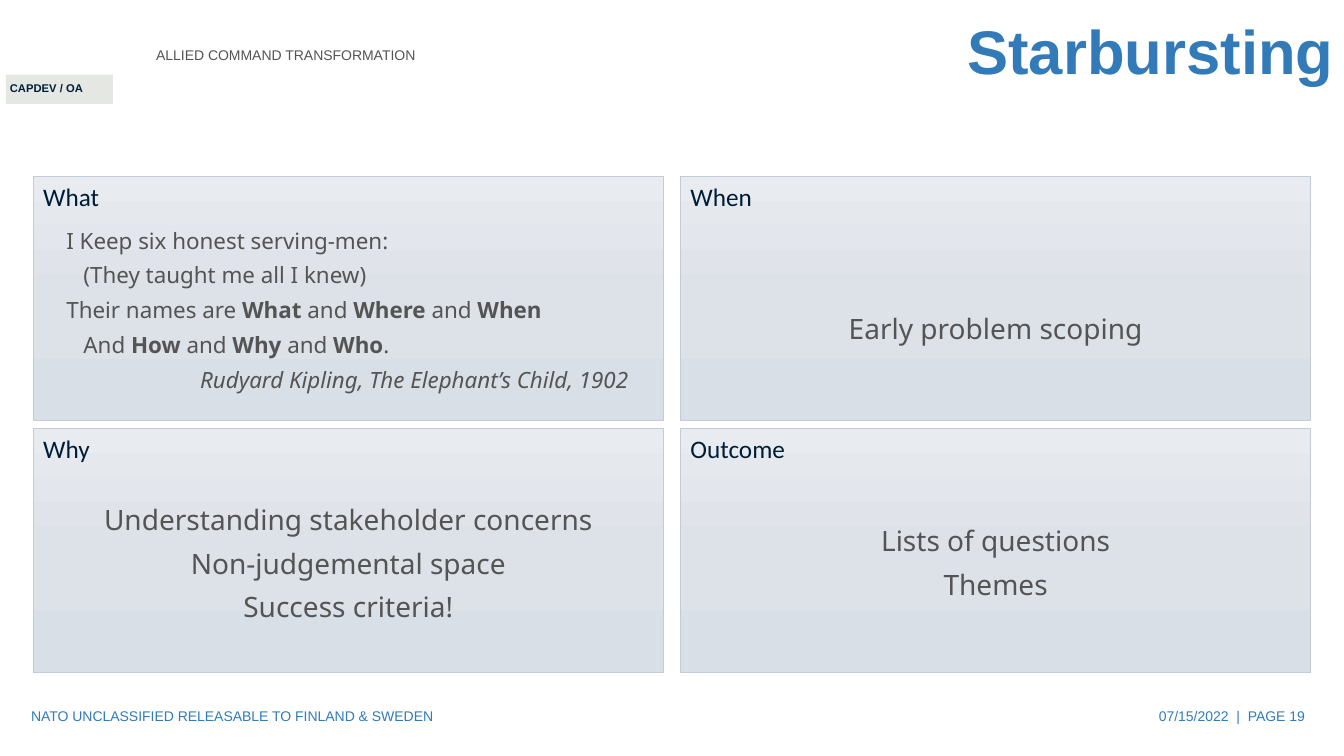
from dataclasses import dataclass

from pptx import Presentation
from pptx.dml.color import RGBColor
from pptx.enum.shapes import MSO_SHAPE
from pptx.enum.text import MSO_ANCHOR, PP_ALIGN
from pptx.oxml import parse_xml
from pptx.oxml.ns import nsdecls
from pptx.util import Inches, Pt

RECT = MSO_SHAPE.RECTANGLE
TOP, MID = MSO_ANCHOR.TOP, MSO_ANCHOR.MIDDLE
LEFT, MIDST, RIGHT = PP_ALIGN.LEFT, PP_ALIGN.CENTER, PP_ALIGN.RIGHT

NAVY, BLUE, GREY = "001D38", "327BB8", "545454"
STOPS = ((0, "E8EBEF"), (50, "DDE2E8"), (100, "D9DFE6"))
WIDE, HIGH = 6.25, 2.42
COLS, ROWS = (0.33, 6.75), (1.75, 4.25)


@dataclass
class Line:
    text: str  # parts between ** marks are bold
    align: PP_ALIGN = MIDST
    indent: float = 0
    italic: bool = False


@dataclass
class Label:
    text: str
    box: tuple[float, float, float, float]
    size: float
    color: str
    align: PP_ALIGN = LEFT
    bold: bool = False
    anchor: MSO_ANCHOR = MID
    wrap: bool = True


@dataclass
class Panel:
    head: str
    col: int
    row: int
    box: tuple[float, float, float, float]
    size: float
    lines: list[Line]


LABELS = [
    Label("ALLIED COMMAND TRANSFORMATION", (1.45, 0.25, 5.91, 0.59), 10, GREY),
    Label("CAPDEV / OA", (0, 0.76, 0.93, 0.24), 8, NAVY, bold=True, anchor=TOP, wrap=False),
    Label("Starbursting", (1.83, 0, 11.5, 1.08), 44, BLUE, RIGHT, True),
    Label("NATO UNCLASSIFIED RELEASABLE TO FINLAND & SWEDEN", (0.21, 6.9, 4.5, 0.4), 10, BLUE),
    Label("07/15/2022  |  PAGE 19", (10.04, 6.9, 3, 0.4), 10, BLUE, RIGHT),
]

PANELS = [
    Panel("What", 0, 0, (0.56, 2.11, 5.77, 1.85), 16, [
        Line("I Keep six honest serving-men:", LEFT),
        Line("(They taught me all I knew)", LEFT, 0.17),
        Line("Their names are **What** and **Where** and **When**", LEFT),
        Line("And **How** and **Why** and **Who**.", LEFT, 0.17),
        Line("Rudyard Kipling, The Elephant’s Child, 1902", RIGHT, italic=True),
    ]),
    Panel("When", 1, 0, (7, 2.96, 5.75, 0.5), 20, [Line("Early problem scoping")]),
    Panel("Why", 0, 1, (0.58, 4.83, 5.75, 1.41), 20, [
        Line("Understanding stakeholder concerns"),
        Line("Non-judgemental space"),
        Line("Success criteria!"),
    ]),
    Panel("Outcome", 1, 1, (7, 5.04, 5.75, 0.98), 20, [
        Line("Lists of questions"),
        Line("Themes"),
    ]),
]


def rgb(code: str) -> RGBColor:
    return RGBColor.from_string(code)


def style(para, face: str, size: float, color: str, align: PP_ALIGN = LEFT) -> None:
    para.alignment = align
    para.font.name = face
    para.font.size = Pt(size)
    para.font.color.rgb = rgb(color)


def add_rect(slide, box: tuple[float, float, float, float]):
    rect = slide.shapes.add_shape(RECT, *map(Inches, box))
    rect.shadow.inherit = False
    return rect


def add_frame(slide, box: tuple[float, float, float, float], anchor: MSO_ANCHOR):
    frame = slide.shapes.add_textbox(*map(Inches, box)).text_frame
    frame.word_wrap = True
    frame.vertical_anchor = anchor
    return frame


def add_label(slide, label: Label) -> None:
    frame = add_frame(slide, label.box, label.anchor)
    frame.word_wrap = label.wrap
    para = frame.paragraphs[0]
    para.text = label.text
    style(para, "Arial", label.size, label.color, label.align)
    para.font.bold = label.bold
    if label.size == 44:
        para.line_spacing = 0.9


def shade(shape) -> None:
    """Fill a shape with the three-stop gradient, top to bottom."""
    stops = "".join(
        f'<a:gs pos="{pos * 1000}"><a:srgbClr val="{code}"/></a:gs>' for pos, code in STOPS
    )
    fill = parse_xml(
        f'<a:gradFill {nsdecls("a")} rotWithShape="1"><a:gsLst>{stops}</a:gsLst>'
        '<a:lin ang="5400000" scaled="0"/></a:gradFill>'
    )
    shape._element.spPr.insert(2, fill)  # right after the geometry


def add_panel(slide, panel: Panel) -> None:
    # Card with its heading
    card = add_rect(slide, (COLS[panel.col], ROWS[panel.row], WIDE, HIGH))
    shade(card)
    card.line.color.rgb = rgb("C3CCD6")
    card.line.width = Pt(0.5)
    card.text_frame.vertical_anchor = TOP
    head = card.text_frame.paragraphs[0]
    head.text = panel.head
    style(head, "Calibri", 18, NAVY)

    # Body text
    frame = add_frame(slide, panel.box, MID)
    for i, line in enumerate(panel.lines):
        para = frame.add_paragraph() if i else frame.paragraphs[0]
        para.line_spacing = 1.3
        if line.indent:
            para._p.get_or_add_pPr().set("marL", str(Inches(line.indent)))
        style(para, "Noto Sans", panel.size, GREY, line.align)
        para.font.italic = line.italic
        for j, part in enumerate(line.text.split("**")):
            if part:
                run = para.add_run()
                run.text = part
                if j % 2:
                    run.font.bold = True


def main() -> None:
    deck = Presentation()
    deck.slide_width, deck.slide_height = Inches(13.33), Inches(7.5)
    slide = deck.slides.add_slide(deck.slide_layouts[6])

    # Tag behind the unit name
    tag = add_rect(slide, (0.06, 0.74, 1.06, 0.29))
    tag.fill.solid()
    tag.fill.fore_color.rgb = rgb("E5E7E3")
    tag.line.fill.background()

    # Header and footer
    for label in LABELS:
        add_label(slide, label)

    # Grid of four panels
    for panel in PANELS:
        add_panel(slide, panel)

    deck.save("out.pptx")


if __name__ == "__main__":
    main()
